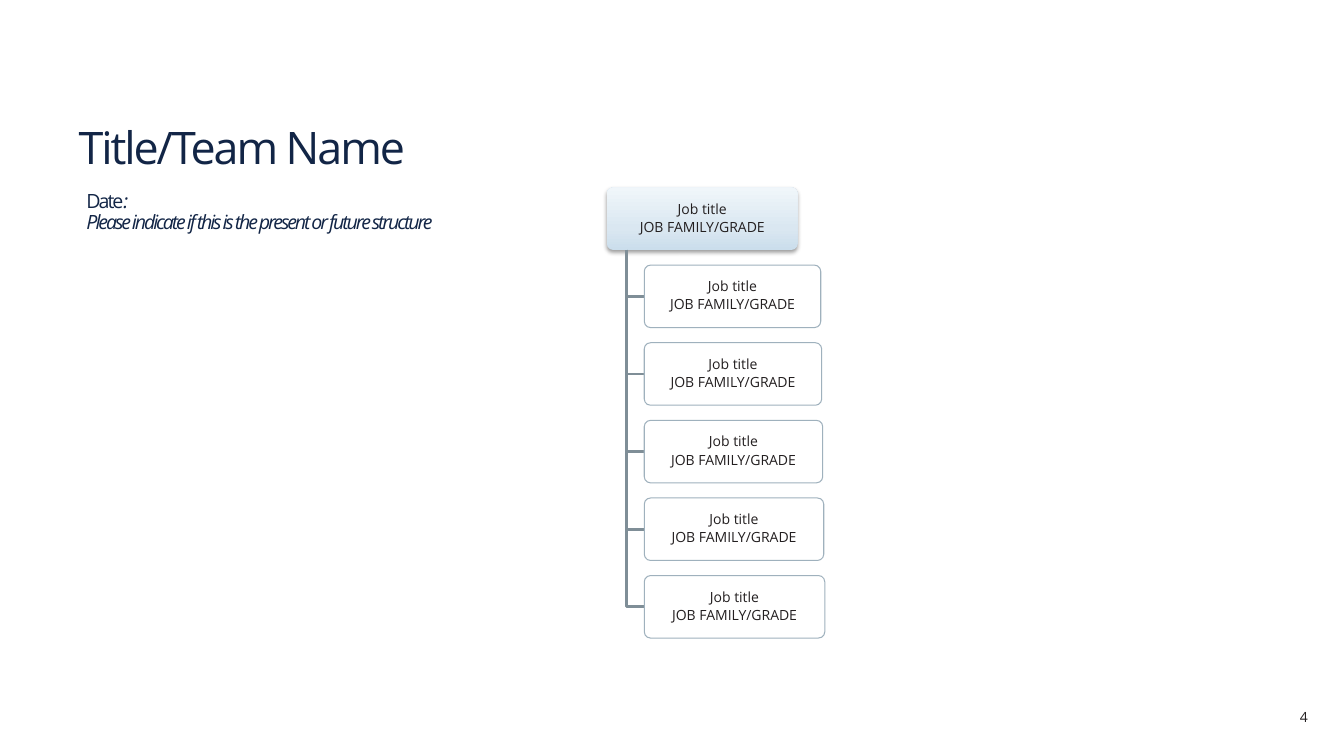
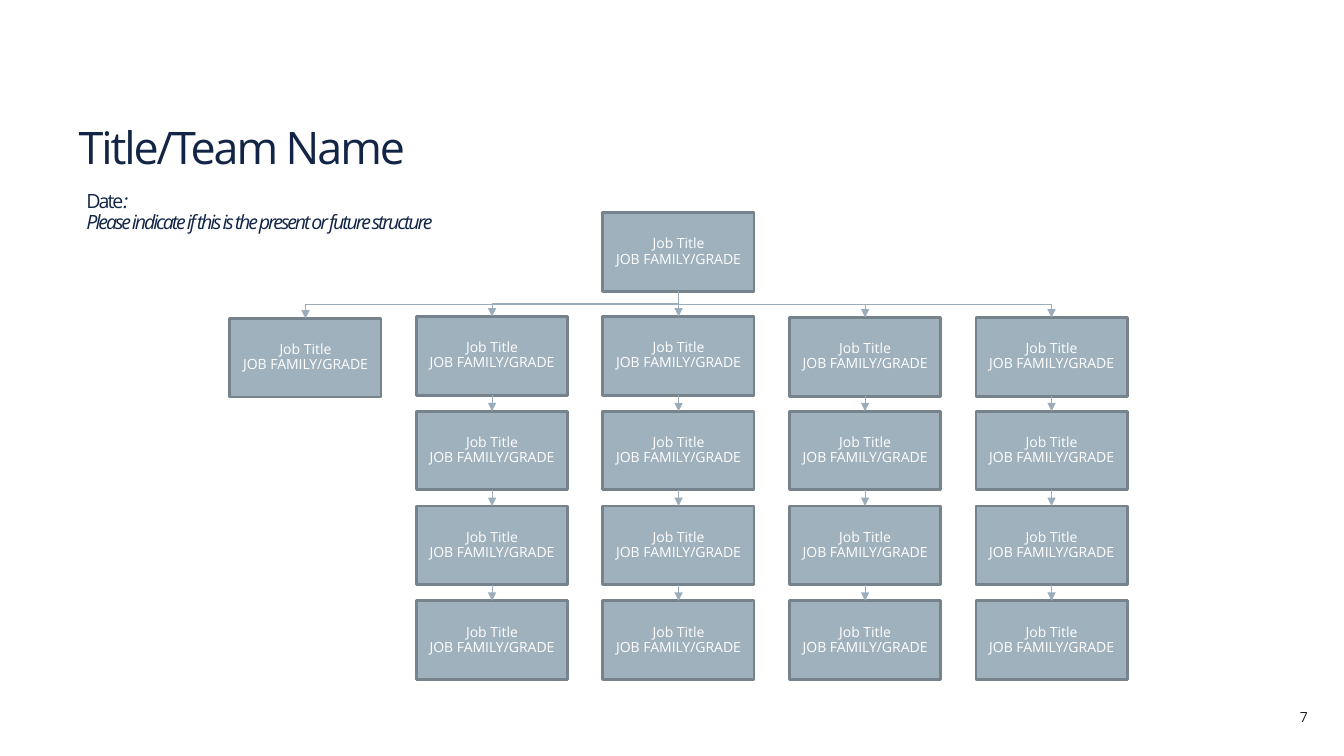
from copy import deepcopy

from lxml.etree import SubElement
from pptx import Presentation
from pptx.dml.color import RGBColor
from pptx.enum.shapes import MSO_CONNECTOR as CONN, MSO_SHAPE as SHAPE
from pptx.enum.text import MSO_ANCHOR as ANCHOR, MSO_AUTO_SIZE as AUTO, PP_ALIGN as ALIGN
from pptx.oxml.ns import qn
from pptx.util import Inches, Pt

FONT = "Open Sans"
COLORS = {name: RGBColor.from_string(value) for name, value in {
    "navy": "122546", "ink": "231F20", "white": "FFFFFF",
    "steel": "9FB1BD", "steel_dark": "76838C", "arrow": "9BADBA", "branch": "7F8E97",
    "grad_low": "CBDEEC", "grad_mid": "DAE7F1", "grad_top": "F0F6FA",
}.items()}


def write(tf, lines, size, color, align=ALIGN.LEFT, spc=None):
    """Fill a text frame; each line is a list of (text, italic) runs."""
    tf.word_wrap = True
    for i, runs in enumerate(lines):
        p = tf.paragraphs[0] if i == 0 else tf.add_paragraph()
        p.alignment, p.line_spacing = align, 0.9
        p.font.name, p.font.size, p.font.color.rgb = FONT, Pt(size), COLORS[color]
        for text, italic in runs:
            r = p.add_run()
            r.text = text
            if italic:
                r.font.italic = True
            if spc:
                r._r.get_or_add_rPr().set("spc", str(spc))


def job_box(s, shape, x, y, w, h, title, color):
    sp = s.shapes.add_shape(shape, Inches(x), Inches(y), Inches(w), Inches(h))
    sp.shadow.inherit = False
    sp.text_frame.vertical_anchor = ANCHOR.MIDDLE
    write(sp.text_frame, [[(title, False)], [("JOB FAMILY/GRADE", False)]],
          10, color, ALIGN.CENTER)
    return sp


prs = Presentation()
prs.slide_width, prs.slide_height = Inches(13.33), Inches(7.5)

# Shared parts: title, date note, slide number
slides = []
for number in ("4", "7"):
    s = prs.slides.add_slide(prs.slide_layouts[5])
    slides.append(s)
    title = s.shapes.title
    title.left, title.top = Inches(0.68), Inches(0.76)
    title.width, title.height = Inches(11.86), Inches(1.02)
    title.text_frame.auto_size = AUTO.NONE
    title.text_frame.vertical_anchor = ANCHOR.BOTTOM
    write(title.text_frame, [[("Title/Team Name", False)]], 32, "navy", spc=-150)

    note = s.shapes.add_textbox(Inches(0.76), Inches(1.85), Inches(10.84), Inches(0.57))
    write(note.text_frame, [
        [("Date", False), (":", True)],
        [("Please indicate if this is the present or future structure", True)],
    ], 14, "navy", spc=-150)

    page = s.shapes.add_textbox(Inches(12.02), Inches(7), Inches(1.05), Inches(0.27))
    write(page.text_frame, [[(number, False)]], 10, "ink", ALIGN.RIGHT)

# First slide: one lead with a hanging list of five jobs
s = slides[0]
BOX_H, CHILD_X, CHILD_Y, CHILD_PITCH = 0.62, 6.39, 2.63, 0.77
TRUNK_X, LEAD_Y = 6.21, 1.86
lead = job_box(s, SHAPE.ROUNDED_RECTANGLE, 6.02, LEAD_Y, 1.89, BOX_H, "Job title", "ink")
lead.line.fill.background()
lead.fill.gradient()
lead.fill.gradient_angle = 90
stops = lead._element.spPr.find(qn("a:gradFill")).find(qn("a:gsLst"))
stops.insert(1, deepcopy(stops[0]))
for stop, (position, name) in zip(lead.fill.gradient_stops,
                                  [(0, "grad_low"), (0.35, "grad_mid"), (1, "grad_top")]):
    stop.position, stop.color.rgb = position, COLORS[name]

# Soft shadow below the lead
effects = lead._element.spPr.find(qn("a:effectLst"))
shadow = SubElement(effects, qn("a:outerShdw"), blurRad=str(Pt(3.1)), dist=str(Pt(1.6)),
                    dir="5400000", rotWithShape="0")
black = SubElement(shadow, qn("a:srgbClr"), val="000000")
SubElement(black, qn("a:alpha"), val="38000")

rounded = [lead]
for i in range(5):
    y = CHILD_Y + i * CHILD_PITCH
    middle = y + BOX_H / 2
    path = s.shapes.build_freeform(Inches(TRUNK_X), Inches(LEAD_Y + BOX_H))
    path.add_line_segments([(Inches(TRUNK_X), Inches(middle)),
                            (Inches(CHILD_X), Inches(middle))], close=False)
    branch = path.convert_to_shape()
    branch.shadow.inherit = False
    branch.fill.background()
    branch.line.color.rgb, branch.line.width = COLORS["branch"], Pt(2)
    child = job_box(s, SHAPE.ROUNDED_RECTANGLE, CHILD_X, y, 1.75 + 0.01 * i, BOX_H,
                    "Job title", "ink")
    child.fill.solid()
    child.fill.fore_color.rgb = COLORS["white"]
    child.line.color.rgb, child.line.width = COLORS["steel"], Pt(0.75)
    rounded.append(child)

for sp in rounded:
    sp.adjustments[0] = 0.1
    tf = sp.text_frame
    tf.margin_left = tf.margin_right = Inches(0.02)
    tf.margin_top = tf.margin_bottom = Inches(0.01)
    for p in tf.paragraphs:
        p.space_after = Pt(2.2)

# Second slide: one head over five columns of jobs
s = slides[1]
COL_X, COL_PITCH, ROW_Y, ROW_PITCH = 2.28, 1.85, 3.14, 0.94
CARD_W, CARD_H, HEAD_Y = 1.5, 0.78, 2.11
FIRST_ROW = [3.16, 3.14, 3.14, 3.15, 3.15]
ROWS = [1, 4, 4, 4, 4]
head_x = COL_X + 2 * COL_PITCH + CARD_W / 2
head_bottom = HEAD_Y + CARD_H

cards = [(COL_X + 2 * COL_PITCH, HEAD_Y)]
arrows = []
for col, rows in enumerate(ROWS):
    x = COL_X + col * COL_PITCH
    center = x + CARD_W / 2
    tops = [FIRST_ROW[col]] + [ROW_Y + row * ROW_PITCH for row in range(1, rows)]
    cards += [(x, top) for top in tops]
    arrows.append((head_x, head_bottom, center, tops[0]))
    arrows += [(center, above + CARD_H, center, below)
               for above, below in zip(tops, tops[1:])]

for x, y in cards:
    card = job_box(s, SHAPE.RECTANGLE, x, y, CARD_W, CARD_H, "Job Title", "white")
    card.fill.solid()
    card.fill.fore_color.rgb = COLORS["steel"]
    card.line.color.rgb, card.line.width = COLORS["steel_dark"], Pt(2)

# Arrows: straight down, or an elbow turned to leave downwards
for x1, y1, x2, y2 in arrows:
    if abs(x2 - x1) < 0.01:
        kind, ends, turn = CONN.STRAIGHT, (x1, y1, x2, y2), 0
    else:
        mid_x, mid_y = (x1 + x2) / 2, (y1 + y2) / 2
        half_run, half_drop = abs(x2 - x1) / 2, (y2 - y1) / 2
        turn = 90 if x2 < x1 else 270
        side = half_drop if x2 < x1 else -half_drop
        kind = CONN.ELBOW
        ends = (mid_x - side, mid_y - half_run, mid_x + side, mid_y + half_run)
    arrow = s.shapes.add_connector(kind, *map(Inches, ends))
    arrow.line.color.rgb, arrow.line.width = COLORS["arrow"], Pt(0.75)
    spPr = arrow._element.spPr
    if turn:
        spPr.find(qn("a:xfrm")).set("rot", str(turn * 60000))
    SubElement(spPr.find(qn("a:ln")), qn("a:tailEnd"), type="triangle")
    SubElement(spPr, qn("a:effectLst"))

prs.save("out.pptx")
